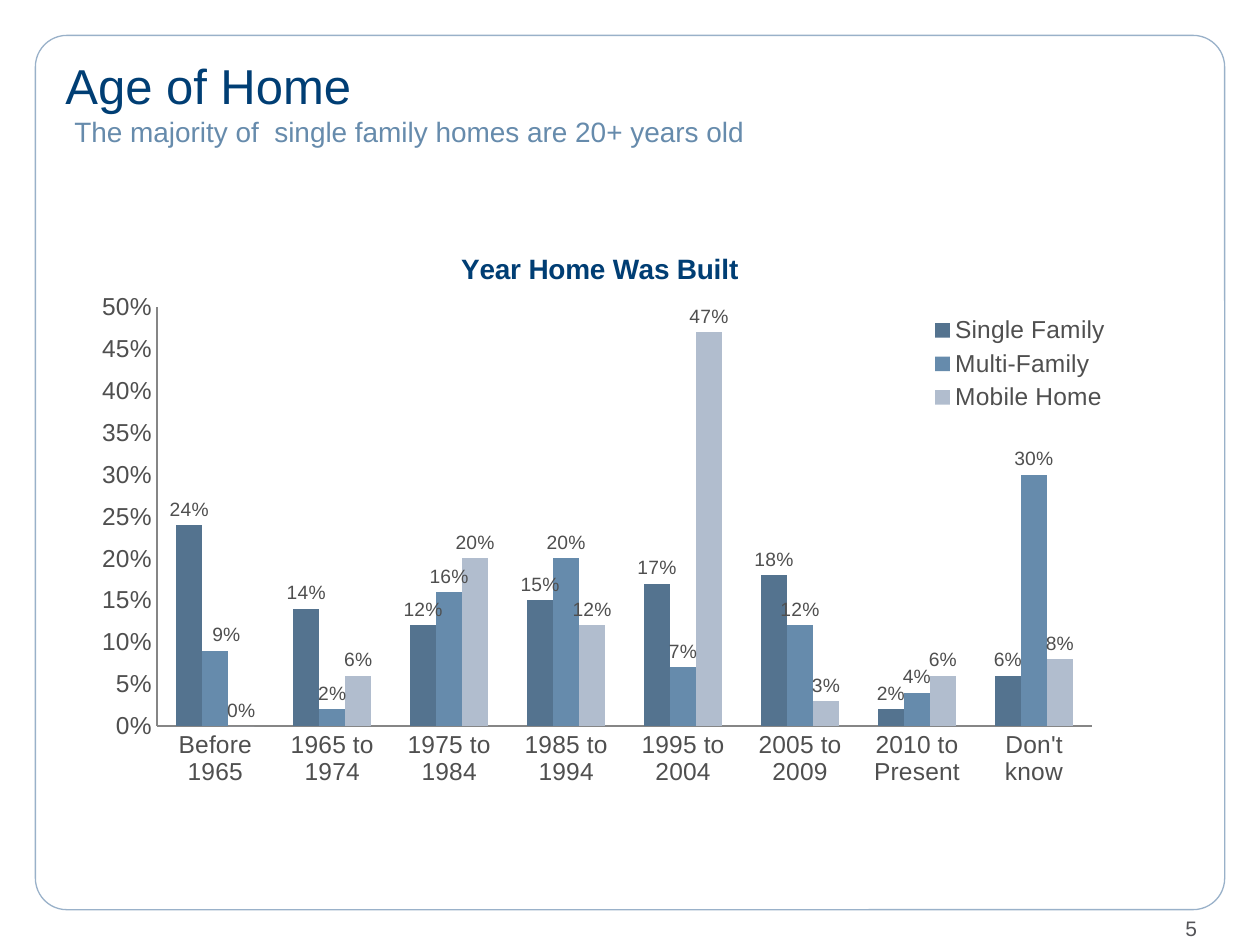
from lxml import etree
from pptx import Presentation
from pptx.chart.data import CategoryChartData
from pptx.dml.color import RGBColor
from pptx.enum.chart import XL_CHART_TYPE, XL_LABEL_POSITION, XL_LEGEND_POSITION, XL_TICK_MARK
from pptx.enum.shapes import MSO_SHAPE
from pptx.enum.text import MSO_ANCHOR, MSO_AUTO_SIZE, PP_ALIGN
from pptx.oxml.ns import qn
from pptx.util import Pt

COLUMNS = XL_CHART_TYPE.COLUMN_CLUSTERED
ABOVE_BAR = XL_LABEL_POSITION.OUTSIDE_END
LEGEND_RIGHT = XL_LEGEND_POSITION.RIGHT
NO_TICKS = XL_TICK_MARK.NONE
LEFT, RIGHT = PP_ALIGN.LEFT, PP_ALIGN.RIGHT
TOP, MIDDLE = MSO_ANCHOR.TOP, MSO_ANCHOR.MIDDLE

COLORS = {
    "navy": "003E74", "steel": "668BAC", "frame": "99B1C9", "number": "545458",
    "chart text": "4F4F4F", "axis": "868686",
    "Single Family": "54738F", "Multi-Family": "668BAC", "Mobile Home": "B1BDCE",
}
YEARS = ["Before 1965", "1965 to 1974", "1975 to 1984", "1985 to 1994",
         "1995 to 2004", "2005 to 2009", "2010 to Present", "Don't know"]
SHARES = {
    "Single Family": [0.24, 0.14, 0.12, 0.15, 0.17, 0.18, 0.02, 0.06],
    "Multi-Family": [0.09, 0.02, 0.16, 0.2, 0.07, 0.12, 0.04, 0.3],
    "Mobile Home": [0, 0.06, 0.2, 0.12, 0.47, 0.03, 0.06, 0.08],
}


def write_text(shape, box, text, size, color, align=LEFT, anchor=TOP):
    shape.left, shape.top, shape.width, shape.height = map(Pt, box)
    frame = shape.text_frame
    settings = {"margin_left": 0, "margin_top": 0, "margin_right": 0, "margin_bottom": 0,
                "word_wrap": True, "auto_size": MSO_AUTO_SIZE.NONE,
                "vertical_anchor": anchor, "text": text}
    for name, value in settings.items():
        setattr(frame, name, value)
    paragraph = frame.paragraphs[0]
    properties = paragraph._p.get_or_add_pPr()
    properties.set("marL", "0")
    properties.set("indent", "0")
    etree.SubElement(properties, qn("a:buNone"))
    paragraph.alignment = align
    paragraph.space_before = Pt(0)
    font = paragraph.runs[0].font
    font.name, font.size = "Arial", Pt(size)
    font.color.rgb = RGBColor.from_string(COLORS[color])


def set_layout(element, index, values):
    """Place a chart part by fractions of the chart area."""
    for old in element.findall(qn("c:layout")):
        element.remove(old)
    layout = etree.Element(qn("c:layout"))
    manual = etree.SubElement(layout, qn("c:manualLayout"))
    for tag, value in values.items():
        etree.SubElement(manual, qn(f"c:{tag}")).set("val", str(value))
    element.insert(index, layout)


prs = Presentation()
prs.slide_width, prs.slide_height = Pt(720), Pt(540)
slide = prs.slides.add_slide(prs.slide_layouts[1])

frame = slide.shapes.add_shape(MSO_SHAPE.ROUNDED_RECTANGLE, Pt(20.2), Pt(20.2), Pt(679.6), Pt(499.6))
frame.adjustments[0] = 0.036
frame.shadow.inherit = False
frame.fill.background()
frame.line.color.rgb = RGBColor.from_string(COLORS["frame"])
frame.line.width = Pt(0.75)

title, subtitle = slide.placeholders
write_text(title, (37.4, 28.8, 638, 39.6), "Age of Home", 28, "navy", anchor=MIDDLE)
write_text(subtitle, (42.5, 65.5, 639, 33),
           "The majority of  single family homes are 20+ years old", 16, "steel")
page_number = slide.shapes.add_textbox(0, 0, 0, 0)
write_text(page_number, (583.2, 523.4, 100.8, 16.6), "5", 12, "number", align=RIGHT)

# Chart
data = CategoryChartData(number_format="0%")
data.categories = YEARS
for home, shares in SHARES.items():
    data.add_series(home, shares)
chart = slide.shapes.add_chart(COLUMNS, Pt(37.4), Pt(130.3), Pt(638), Pt(337.7), data).chart
chart.font.name, chart.font.size = "Arial", Pt(18)
chart.font.color.rgb = RGBColor.from_string(COLORS["chart text"])

chart.chart_title.text_frame.text = "Year Home Was Built"
heading = chart.chart_title.text_frame.paragraphs[0].runs[0].font
heading.name, heading.size, heading.bold = "Arial", Pt(16), True
heading.color.rgb = RGBColor.from_string(COLORS["navy"])

chart.has_legend = True
chart.legend.position = LEGEND_RIGHT
chart.legend.include_in_layout = False
chart.legend.font.size = Pt(14)

shares_axis = chart.value_axis
shares_axis.minimum_scale, shares_axis.maximum_scale = 0, 0.5
shares_axis.major_unit = 0.05
shares_axis.has_major_gridlines = False
shares_axis.tick_labels.number_format = "0%"
shares_axis.tick_labels.number_format_is_linked = False
for axis in (shares_axis, chart.category_axis):
    axis.major_tick_mark = axis.minor_tick_mark = NO_TICKS
    axis.tick_labels.font.size = Pt(14)
    axis.format.line.color.rgb = RGBColor.from_string(COLORS["axis"])
    axis.format.line.width = Pt(0.75)

plot = chart.plots[0]
plot.gap_width, plot.overlap = 150, 0
plot.vary_by_categories = False
for series in plot.series:
    series.format.fill.solid()
    series.format.fill.fore_color.rgb = RGBColor.from_string(COLORS[series.name])
    labels = series.data_labels
    labels.show_value = True
    labels.position = ABOVE_BAR
    labels.number_format, labels.number_format_is_linked = "0%", False
    labels.font.size = Pt(11)

# The 9% label sits a little to the right of its bar
multi_family = plot.series[1]
shifted_label = multi_family.points[0].data_label
shifted_label.font.size = Pt(11)
shifted_label.position = ABOVE_BAR
set_layout(multi_family._element.find(".//" + qn("c:dLbl")), 1, {"x": 0.01, "y": 0})

set_layout(chart._chartSpace.chart.plotArea, 0,
           {"layoutTarget": "inner", "xMode": "edge", "yMode": "edge",
            "x": 0.082, "y": 0.134, "w": 0.838, "h": 0.709})
set_layout(chart.chart_title._element, 1,
           {"xMode": "edge", "yMode": "edge", "x": 0.35, "y": 0.03})
set_layout(chart.legend._element, 1,
           {"xMode": "edge", "yMode": "edge", "x": 0.77, "y": 0.14, "w": 0.17, "h": 0.18})

prs.save("out.pptx")
